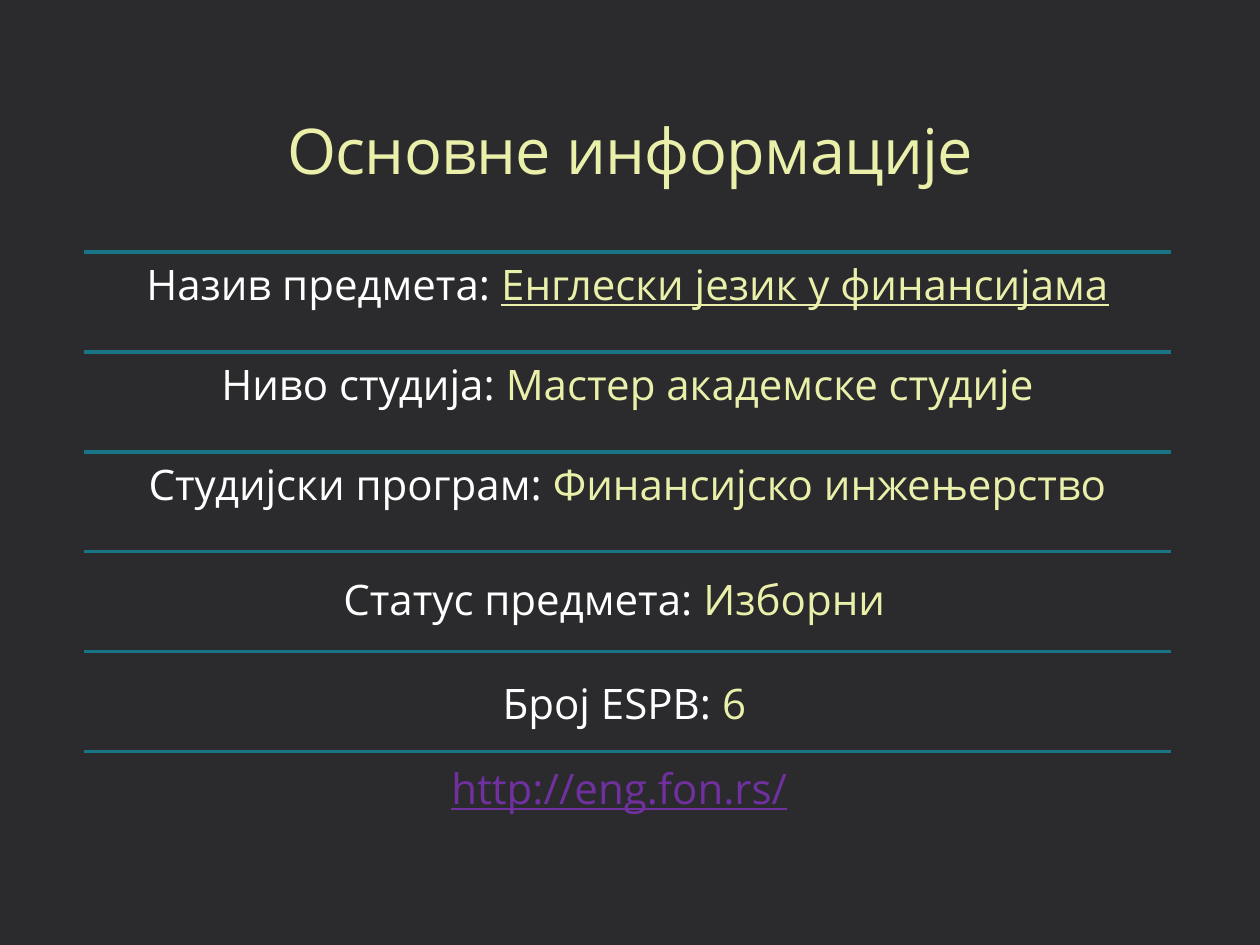
from lxml import etree
from pptx import Presentation
from pptx.dml.color import RGBColor
from pptx.enum.shapes import MSO_CONNECTOR
from pptx.enum.text import MSO_ANCHOR, PP_ALIGN
from pptx.oxml.ns import qn
from pptx.util import Inches, Pt

STRAIGHT = MSO_CONNECTOR.STRAIGHT
TOP, MIDDLE = MSO_ANCHOR.TOP, MSO_ANCHOR.MIDDLE
CENTER = PP_ALIGN.CENTER
WHITE, LIME, TEAL, PURPLE, DARK = "FFFFFF", "EAEFAA", "197585", "7030A0", "2B2B2D"
LEFT, WIDTH = 0.67, 8.62
FIRST_RULE, ROW = 2, 0.793


def color(value):
    return RGBColor.from_string(value)


def add_text(box, runs, size=24, margins=(0.1, 0.05), anchor=TOP, spacing=1.0):
    shape = slide.shapes.add_textbox(*[Inches(length) for length in box])
    frame = shape.text_frame
    side, end = [Inches(margin) for margin in margins]
    frame_format = {
        "word_wrap": True, "vertical_anchor": anchor,
        "margin_left": side, "margin_right": side,
        "margin_top": end, "margin_bottom": end,
    }
    for name, value in frame_format.items():
        setattr(frame, name, value)
    paragraph = frame.paragraphs[0]
    paragraph.alignment = CENTER
    paragraph.line_spacing = spacing
    for text, fill, underline in runs:
        run = paragraph.add_run()
        run.text = text
        font_format = {"name": "Open Sans", "size": Pt(size), "underline": underline}
        for name, value in font_format.items():
            setattr(run.font, name, value)
        run.font.color.rgb = color(fill)
    return paragraph


presentation = Presentation()
presentation.slide_width = Inches(10)
presentation.slide_height = Inches(7.5)
slide = presentation.slides.add_slide(presentation.slide_layouts[6])
slide.background.fill.solid()
slide.background.fill.fore_color.rgb = color(DARK)

title = add_text((0.69, 0.61, WIDTH, 1.24), [("Oсновне информације", LIME, False)],
                 size=36, margins=(0, 0), anchor=MIDDLE, spacing=0.86)
title.runs[0].font._element.set("spc", "-40")

for row in range(6):
    height = Inches(FIRST_RULE + row * ROW)
    rule = slide.shapes.add_connector(
        STRAIGHT, Inches(LEFT), height, Inches(LEFT + WIDTH), height)
    rule.line.color.rgb = color(TEAL)
    rule.line.width = Pt(2)
    etree.SubElement(rule._element.spPr, qn("a:effectLst"))

course_rows = [
    ("Назив предмета: ", "Енглески језик у финансијама", True),
    ("Ниво студија: ", "Мастер академске студије", False),
    ("Студијски програм: ", "Финансијско инжењерство", False),
]
for row, (label, value, underline) in enumerate(course_rows):
    add_text((LEFT, FIRST_RULE + row * ROW, WIDTH, ROW),
             [(label, WHITE, False), (value, LIME, underline)],
             margins=(0.1, 0.1), spacing=0.9)

add_text((0.75, 6, 8.33, 0.81), [("http://eng.fon.rs/", PURPLE, True)])
add_text((1, 4.5, 7.75, 0.5), [("Статус предмета: ", WHITE, False), ("Изборни", LIME, False)])
add_text((1.33, 5.33, 7.25, 0.5), [("Број ESPB: ", WHITE, False), ("6", LIME, False)])

presentation.save("out.pptx")
